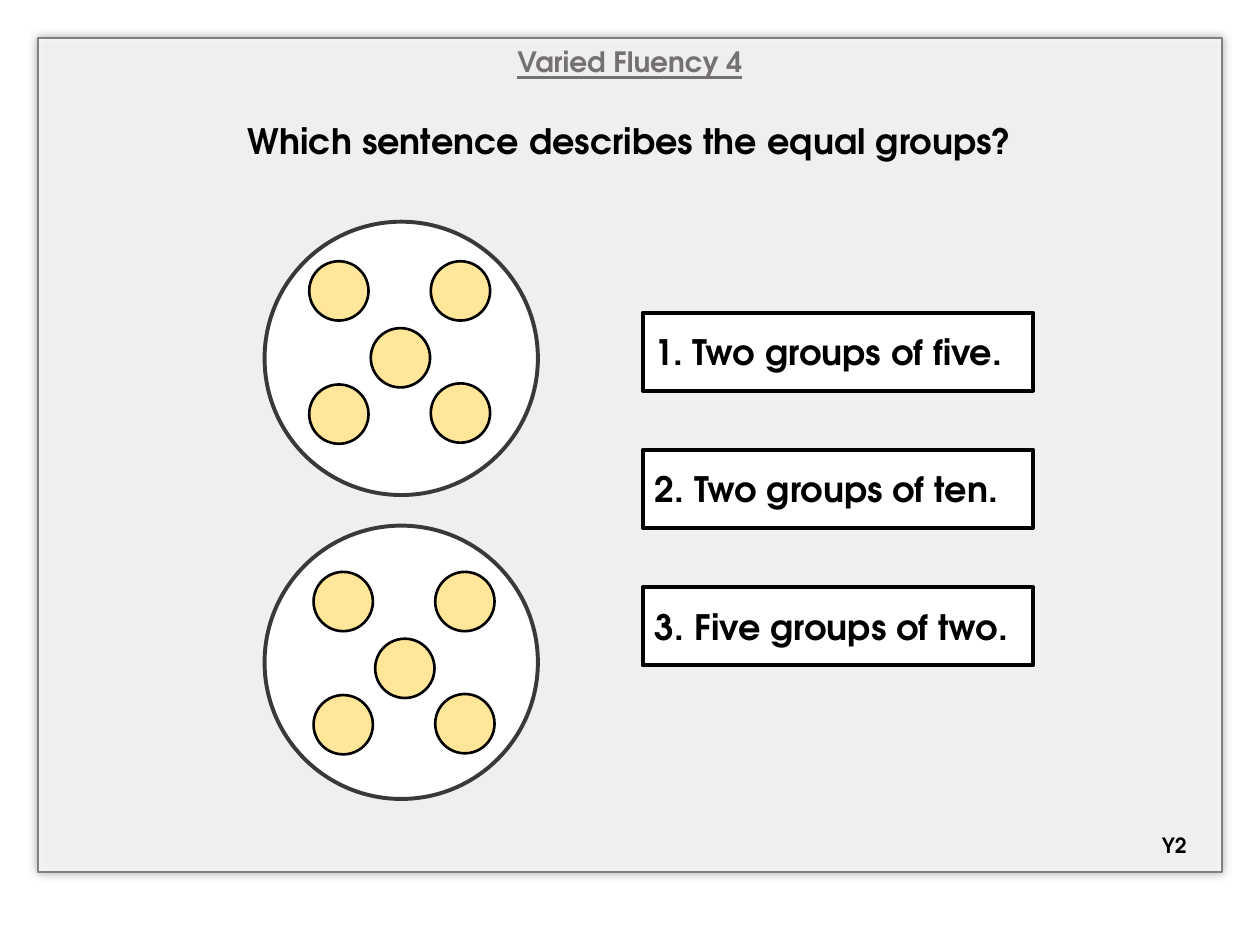
from lxml import etree
from pptx import Presentation
from pptx.dml.color import RGBColor
from pptx.enum.shapes import MSO_SHAPE
from pptx.enum.text import MSO_ANCHOR, MSO_AUTO_SIZE, PP_ALIGN
from pptx.oxml.ns import qn
from pptx.util import Pt

RECTANGLE, OVAL = MSO_SHAPE.RECTANGLE, MSO_SHAPE.OVAL
TOP, MIDDLE = MSO_ANCHOR.TOP, MSO_ANCHOR.MIDDLE
LEFT, CENTER = PP_ALIGN.LEFT, PP_ALIGN.CENTER
NO_AUTOFIT = MSO_AUTO_SIZE.NONE
FONT = "TeX Gyre Adventor"
BLACK, WHITE, COUNTER_YELLOW = "000000", "FFFFFF", "FFE699"


def color(hex_code):
    return RGBColor.from_string(hex_code)


def set_text(shape, text, size, hex_code=BLACK, align=LEFT, anchor=MIDDLE, underline=False):
    frame = shape.text_frame
    frame_format = {"word_wrap": True, "auto_size": NO_AUTOFIT, "vertical_anchor": anchor,
                    "margin_left": Pt(7.2), "margin_right": Pt(7.2),
                    "margin_top": Pt(3.6), "margin_bottom": Pt(3.6)}
    for name, value in frame_format.items():
        setattr(frame, name, value)
    paragraph = frame.paragraphs[0]
    paragraph.alignment = align
    run = paragraph.add_run()
    run.text = text
    font_format = {"name": FONT, "size": Pt(size), "bold": True, "underline": underline}
    for name, value in font_format.items():
        setattr(run.font, name, value)
    run.font.color.rgb = color(hex_code)


def add_figure(slide, kind, box, fill, line, line_width):
    figure = slide.shapes.add_shape(kind, *map(Pt, box))
    figure.shadow.inherit = False
    figure.fill.solid()
    figure.fill.fore_color.rgb = color(fill)
    figure.line.color.rgb = color(line)
    figure.line.width = Pt(line_width)
    return figure


def add_panel(slide, box, question):
    panel = add_figure(slide, RECTANGLE, box, WHITE, "808080", 1)
    set_text(panel, question, 20, align=CENTER, anchor=TOP)
    panel.text_frame.margin_top = Pt(46.8)
    properties = panel.element.spPr
    # Translucent fill
    fill_color = properties.find(qn("a:solidFill")).find(qn("a:srgbClr"))
    etree.SubElement(fill_color, qn("a:alpha"), val="82000")
    # Soft shadow on all sides
    glow = etree.SubElement(properties.find(qn("a:effectLst")), qn("a:outerShdw"),
                            blurRad=str(Pt(5)), dist="0", dir="0", rotWithShape="0")
    glow_color = etree.SubElement(glow, qn("a:srgbClr"), val=BLACK)
    etree.SubElement(glow_color, qn("a:alpha"), val="40000")


def place_title(slide, box, text):
    title = slide.shapes.title
    title.left, title.top, title.width, title.height = map(Pt, box)
    set_text(title, text, 16, "767171", CENTER, TOP, underline=True)
    # Bring the title in front of the panel
    title.element.getparent().append(title.element)


def add_answers(slide, box, answers):
    left, top, width, height = box
    row_height = 44.6
    step = (height - row_height) / (len(answers) - 1)
    for index, answer in enumerate(answers):
        row = (left, top + index * step, width, row_height)
        set_text(add_figure(slide, RECTANGLE, row, WHITE, BLACK, 2.25),
                 f"{index + 1}. {answer}", 20)


def add_group(slide, box, shift_x, shift_y):
    left, top, _, _ = box
    add_figure(slide, OVAL, box, WHITE, "3B3838", 2.25)
    # Five counters, set out as on a die
    size = 33.9
    for x, y in [(25.5, 22.6), (95, 22.6), (60.7, 60.8), (25.5, 93), (95, 92.4)]:
        counter = (left + x + shift_x, top + y + shift_y, size, size)
        add_figure(slide, OVAL, counter, COUNTER_YELLOW, BLACK, 1.5)


def add_year_label(slide, box, text):
    label = slide.shapes.add_textbox(*map(Pt, box))
    set_text(label, text, 12, align=CENTER)


def main():
    deck = Presentation()
    deck.slide_width, deck.slide_height = Pt(720), Pt(540)
    slide = deck.slides.add_slide(deck.slide_layouts[5])

    add_panel(slide, (21.6, 21.6, 676.8, 476.6), "Which sentence describes the equal groups?")
    place_title(slide, (21.6, 21.6, 676.8, 28), "Varied Fluency 4")
    add_answers(slide, (367.2, 178.6, 223.2, 201.6),
                ["Two groups of five.", "Two groups of ten.", "Five groups of two."])
    add_group(slide, (151.2, 126.7, 156.2, 156.2), 0, 0)
    add_group(slide, (151.2, 300.4, 156.2, 156.2), 2.5, 3.8)
    add_year_label(slide, (648.7, 472.3, 44.6, 21.6), "Y2")

    deck.save("out.pptx")


if __name__ == "__main__":
    main()
